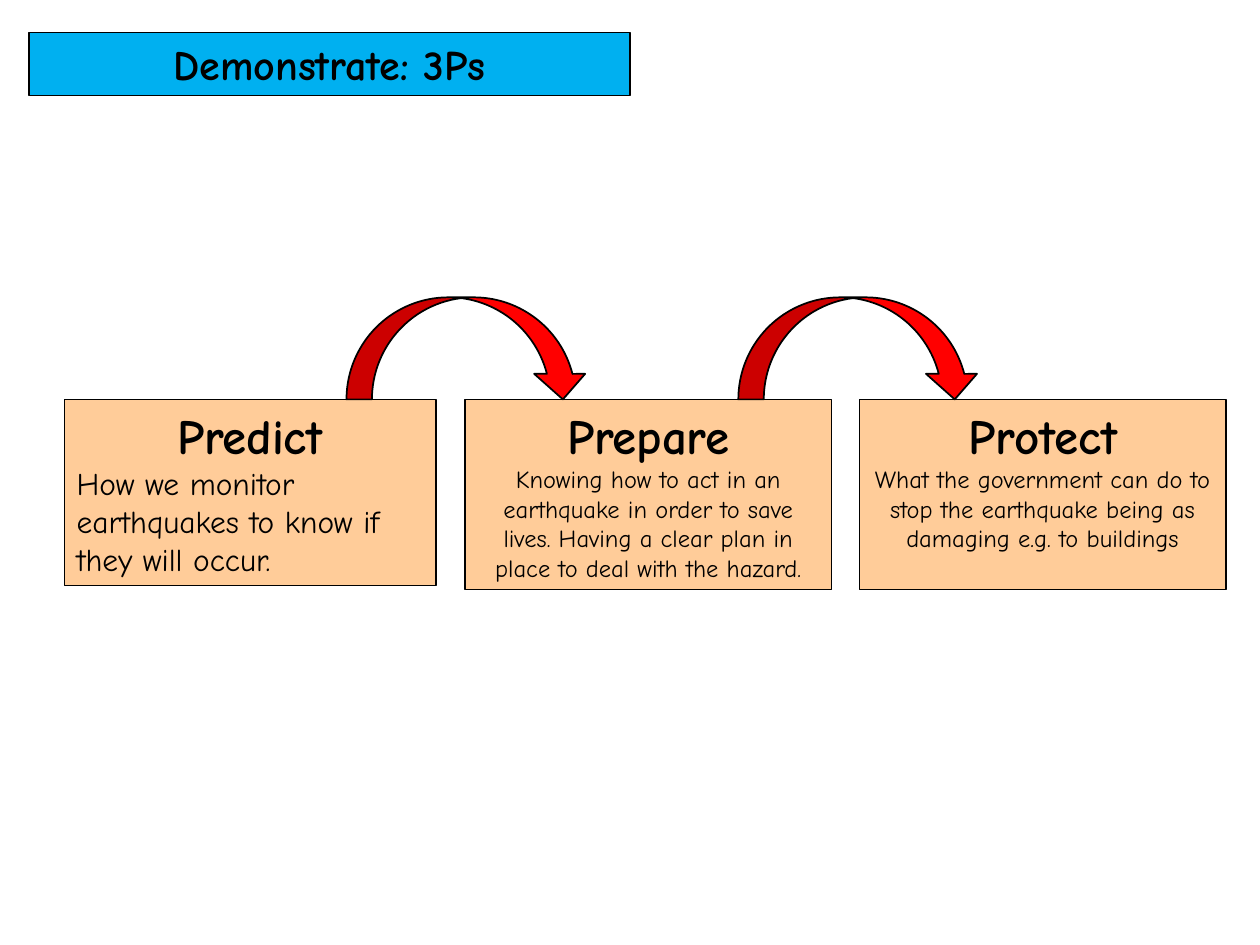
"""Build the slide on the three Ps of earthquake response."""
from pptx import Presentation, util as u
from pptx.dml.color import RGBColor
from pptx.enum import shapes, text

BLACK = RGBColor(0x00, 0x00, 0x00)
BLUE = RGBColor(0x00, 0xB0, 0xF0)
PEACH = RGBColor(0xFF, 0xCC, 0x99)
RED = RGBColor(0xFF, 0x00, 0x00)
FONT = "Comic Neue"
WIDE, HIGH = 10, 7.5
MID, LEFT = text.PP_ALIGN.CENTER, text.PP_ALIGN.LEFT
RECT = shapes.MSO_SHAPE.RECTANGLE
CURVE = shapes.MSO_SHAPE.CURVED_DOWN_ARROW

TOP = 3.17
STEPS = [
    ((0.51, TOP, 2.95, 1.48), "Predict", 18, LEFT,
     "How we monitor earthquakes to know if they will occur."),
    ((3.69, TOP, 2.91, 1.51), "Prepare", 14, MID,
     "Knowing how to act in an earthquake in order to save lives. "
     "Having a clear plan in place to deal with the hazard."),
    ((6.82, TOP, 2.91, 1.51), "Protect", 14, MID,
     "What the government can do to stop the earthquake being as "
     "damaging e.g. to buildings"),
]


def draw(slide, kind, box, fill, line):
    """Add a filled, outlined shape in the box."""
    shape = slide.shapes.add_shape(kind, *map(u.Inches, box))
    shape.shadow.inherit = False
    shape.fill.solid()
    shape.fill.fore_color.rgb = fill
    shape.line.color.rgb = BLACK
    shape.line.width = u.Pt(line)
    return shape


def panel(slide, box, fill, lines):
    """Place a box holding lines of (words, size, bold, alignment)."""
    frame = draw(slide, RECT, box, fill, 0.75).text_frame
    frame.word_wrap = True
    frame.vertical_anchor = text.MSO_ANCHOR.TOP
    for i, (words, size, bold, align) in enumerate(lines):
        para = frame.add_paragraph() if i else frame.paragraphs[0]
        para.text = words
        para.alignment = align
        font = para.font
        font.name, font.size, font.bold = FONT, u.Pt(size), bold
        font.color.rgb = BLACK


def title(slide, box):
    """Place the title bar."""
    panel(slide, box, BLUE, [("Demonstrate: 3Ps", 24, True, MID)])


def step(slide, box, head, size, align, body):
    """Place one of the three Ps with its meaning."""
    panel(slide, box, PEACH,
          [(head, 28, True, MID), (body, size, False, align)])


def arrows(slide, box, count, pitch):
    """Place curved arrows at an equal pitch, the first in the box."""
    left, *rest = box
    for i in range(count):
        draw(slide, CURVE, (left + i * pitch, *rest), RED, 1)


def main():
    """Build and save the slide."""
    deck = Presentation()
    deck.slide_width, deck.slide_height = u.Inches(WIDE), u.Inches(HIGH)
    slide = deck.slides.add_slide(deck.slide_layouts[6])
    for item in STEPS:
        step(slide, *item)
    arrows(slide, (2.75, TOP - 0.81, 1.92, 0.81), len(STEPS) - 1, 3.11)
    title(slide, (0.23, 0.26, 4.77, 0.5))
    deck.save("out.pptx")


if __name__ == "__main__":
    main()
